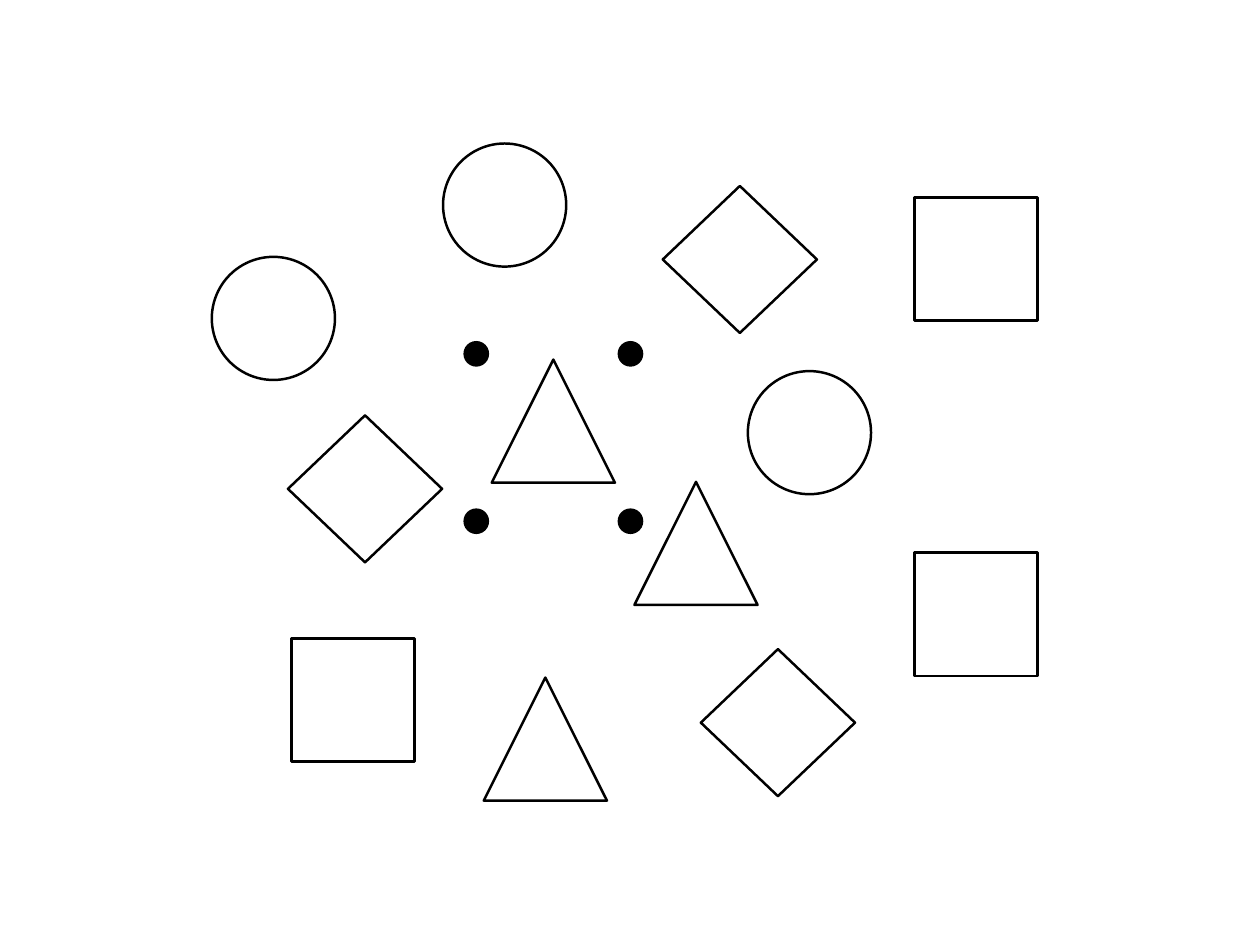
from itertools import product

from pptx import Presentation
from pptx.dml.color import RGBColor
from pptx.enum.shapes import MSO_SHAPE as SHAPE
from pptx.util import Inches, Pt

COLORS = {"ink": "000000", "paper": "FFFFFF"}

SIDE = (1.39, 1.39)
DIAMOND = (1.74, 1.66)
DOT = 0.29
DOT_COLUMNS = (5.23, 6.97)
DOT_ROWS = (3.85, 5.74)

OUTLINES = [
    (SHAPE.OVAL, SIDE, [(2.39, 2.9), (5, 1.62), (8.44, 4.19)]),
    (SHAPE.ISOSCELES_TRIANGLE, SIDE, [(7.16, 5.44), (5.46, 7.65), (5.55, 4.06)]),
    (SHAPE.RECTANGLE, SIDE, [(10.32, 2.23), (10.32, 6.24), (3.29, 7.21)]),
    (SHAPE.DIAMOND, DIAMOND, [(3.25, 4.69), (7.91, 7.33), (7.48, 2.1)]),
]


def color(name):
    return RGBColor.from_string(COLORS[name])


def add_outline(shapes, kind, left, top, width, height):
    sp = shapes.add_shape(kind, Inches(left), Inches(top), Inches(width), Inches(height))
    sp.shadow.inherit = False
    sp.fill.background()
    sp.line.color.rgb = color("ink")
    sp.line.width = Pt(2)


def add_dot(shapes, left, top):
    sp = shapes.add_shape(SHAPE.OVAL, Inches(left), Inches(top), Inches(DOT), Inches(DOT))
    sp.shadow.inherit = False
    sp.fill.solid()
    sp.fill.fore_color.rgb = color("ink")
    sp.line.fill.background()


def main():
    prs = Presentation()
    prs.slide_width, prs.slide_height = Inches(14.22), Inches(10.67)
    s = prs.slides.add_slide(prs.slide_layouts[6])
    s.background.fill.solid()
    s.background.fill.fore_color.rgb = color("paper")

    for kind, size, corners in OUTLINES:
        for corner in corners:
            add_outline(s.shapes, kind, *corner, *size)

    dots = s.shapes.add_group_shape()
    for left, top in product(DOT_COLUMNS, DOT_ROWS):
        add_dot(dots.shapes, left, top)

    prs.save("out.pptx")


if __name__ == "__main__":
    main()
